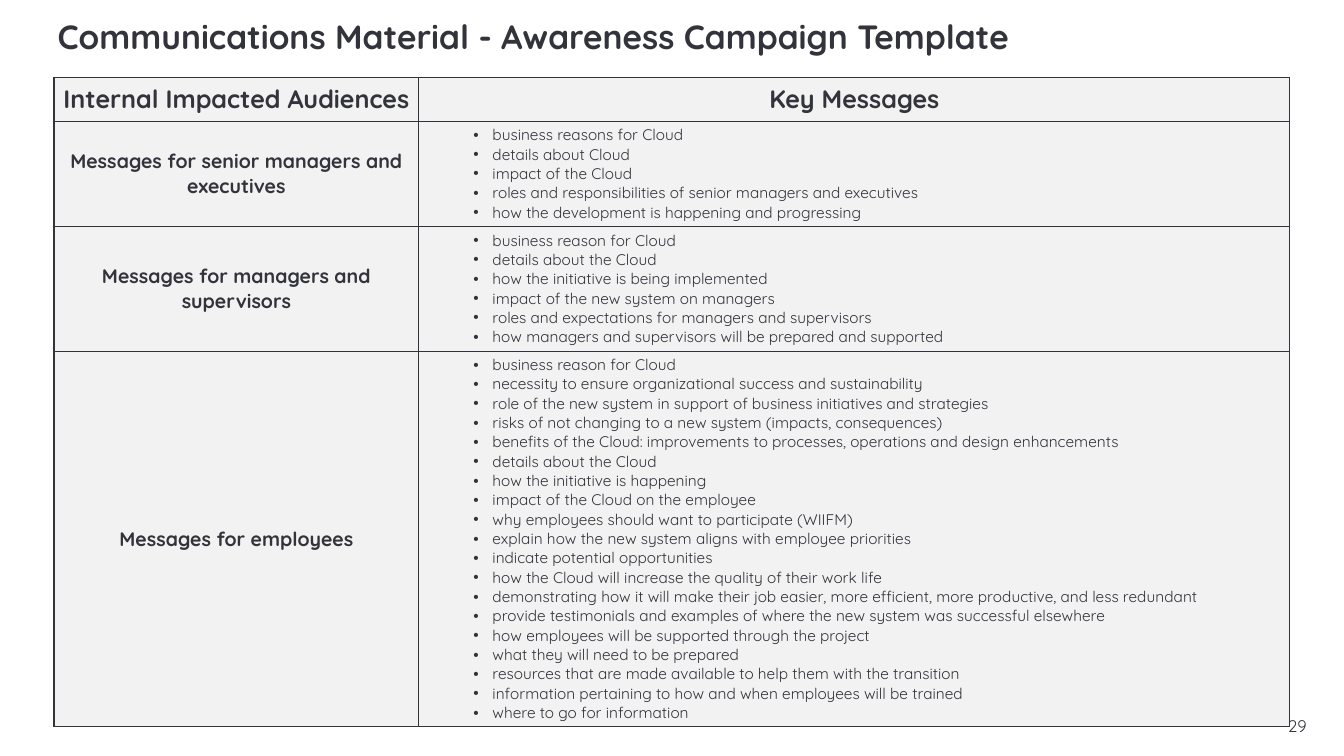
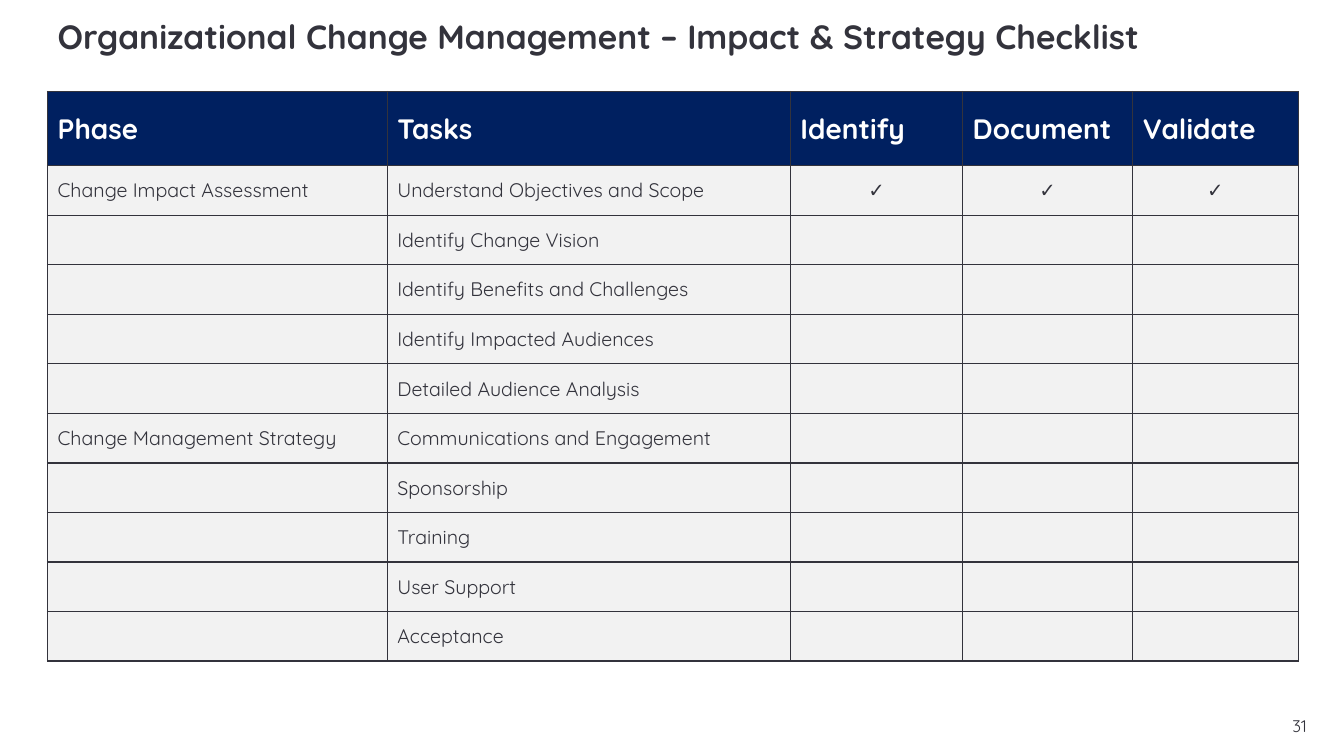
"""Build two change management slides: an awareness campaign table and a checklist."""
from dataclasses import dataclass

from lxml import etree
from pptx import Presentation
from pptx.dml.color import RGBColor
from pptx.enum.text import MSO_ANCHOR, PP_ALIGN
from pptx.oxml.ns import qn
from pptx.util import Pt

LEFT, CENTER, RIGHT = PP_ALIGN.LEFT, PP_ALIGN.CENTER, PP_ALIGN.RIGHT
TOP, MIDDLE = MSO_ANCHOR.TOP, MSO_ANCHOR.MIDDLE
TITLE_ONLY = 5


@dataclass(frozen=True)
class Theme:
    font: str = "Quicksand"
    bullet_font: str = "Arial"
    ink: str = "33333C"
    white: str = "FFFFFF"
    navy: str = "002060"
    pale: str = "F2F2F2"
    title: int = 24
    checklist_header: int = 20
    campaign_header: int = 18
    body: int = 14
    number: int = 12
    bullet: int = 11
    border: int = 1


THEME = Theme()


def write_text(frame, lines, size, color=THEME.ink, bold=False, align=LEFT, anchor=MIDDLE,
               line_spacing=None, before=0, after=0, bullets=False):
    frame.word_wrap = True
    frame.vertical_anchor = anchor
    for index, line in enumerate(lines):
        paragraph = frame.add_paragraph() if index else frame.paragraphs[0]
        paragraph.alignment = align
        paragraph.line_spacing = line_spacing
        paragraph.space_before = Pt(before)
        paragraph.space_after = Pt(after)
        run = paragraph.add_run()
        run.text = line
        run.font.name = THEME.font
        run.font.size = Pt(size)
        run.font.bold = bold
        run.font.color.rgb = RGBColor.from_string(color)
        if bullets:
            paragraph.level = 1
            properties = paragraph._p.get_or_add_pPr()
            properties.set("marL", str(Pt(49.7)))
            properties.set("indent", str(Pt(-13.7)))
            etree.SubElement(properties, qn("a:buFont"), typeface=THEME.bullet_font)
            etree.SubElement(properties, qn("a:buChar"), char="•")


def add_grid(slide, left, top, widths, heights, header_fill, margin=None):
    table = slide.shapes.add_table(len(heights), len(widths), Pt(left), Pt(top),
                                   Pt(sum(widths)), Pt(sum(heights))).table
    for column, width in zip(table.columns, widths):
        column.width = Pt(width)
    for row_index, (row, height) in enumerate(zip(table.rows, heights)):
        row.height = Pt(height)
        for cell in row.cells:
            cell.vertical_anchor = MIDDLE
            properties = cell._tc.get_or_add_tcPr()
            for side in ("a:lnL", "a:lnR", "a:lnT", "a:lnB"):
                line = etree.SubElement(properties, qn(side), w=str(Pt(THEME.border)))
                line_fill = etree.SubElement(line, qn("a:solidFill"))
                etree.SubElement(line_fill, qn("a:srgbClr"), val=THEME.ink)
            cell.fill.solid()
            cell.fill.fore_color.rgb = RGBColor.from_string(
                THEME.pale if row_index else header_fill)
            if margin is not None:
                cell.margin_left = cell.margin_right = Pt(margin)
                cell.margin_top = cell.margin_bottom = Pt(margin)
    return table


presentation = Presentation()
presentation.slide_width = Pt(960)
presentation.slide_height = Pt(540)

slides = []
for title, number in [
    ("Communications Material - Awareness Campaign Template", "29"),
    ("Organizational Change Management – Impact & Strategy Checklist", "31"),
]:
    slide = presentation.slides.add_slide(presentation.slide_layouts[TITLE_ONLY])
    heading = slide.shapes.title
    heading.left, heading.top, heading.width, heading.height = Pt(34), Pt(11), Pt(893.5), Pt(36.7)
    write_text(heading.text_frame, [title], THEME.title, bold=True, anchor=TOP, line_spacing=0.9)
    number_box = slide.shapes.add_textbox(Pt(890), Pt(504), Pt(50.4), Pt(28.8))
    write_text(number_box.text_frame, [number], THEME.number, align=RIGHT)
    slides.append(slide)
campaign_slide, checklist_slide = slides

audiences = [
    ("Messages for senior managers and executives", [
        "business reasons for Cloud",
        "details about Cloud",
        "impact of the Cloud",
        "roles and responsibilities of senior managers and executives",
        "how the development is happening and progressing",
    ]),
    ("Messages for managers and supervisors", [
        "business reason for Cloud",
        "details about the Cloud",
        "how the initiative is being implemented",
        "impact of the new system on managers",
        "roles and expectations for managers and supervisors",
        "how managers and supervisors will be prepared and supported",
    ]),
    ("Messages for employees", [
        "business reason for Cloud",
        "necessity to ensure organizational success and sustainability",
        "role of the new system in support of business initiatives and strategies",
        "risks of not changing to a new system (impacts, consequences)",
        "benefits of the Cloud: improvements to processes, operations and design enhancements",
        "details about the Cloud",
        "how the initiative is happening",
        "impact of the Cloud on the employee",
        "why employees should want to participate (WIIFM)",
        "explain how the new system aligns with employee priorities",
        "indicate potential opportunities",
        "how the Cloud will increase the quality of their work life",
        "demonstrating how it will make their job easier, more efficient, more productive, "
        "and less redundant",
        "provide testimonials and examples of where the new system was successful elsewhere",
        "how employees will be supported through the project",
        "what they will need to be prepared",
        "resources that are made available to help them with the transition",
        "information pertaining to how and when employees will be trained",
        "where to go for information",
    ]),
]
campaign = add_grid(campaign_slide, 38.6, 55.4, [260.6, 622.1], [31.2, 75, 89.3, 268],
                    THEME.pale, margin=2.9)
label_format = {"bold": True, "align": CENTER, "before": 3, "after": 6}
for column, header in enumerate(["Internal Impacted Audiences", "Key Messages"]):
    write_text(campaign.cell(0, column).text_frame, [header], THEME.campaign_header,
               **label_format)
for row, (audience, messages) in enumerate(audiences, start=1):
    write_text(campaign.cell(row, 0).text_frame, [audience], THEME.body, **label_format)
    write_text(campaign.cell(row, 1).text_frame, messages, THEME.bullet, bullets=True)

phases = [
    ("Change Impact Assessment", [
        "Understand Objectives and Scope",
        "Identify Change Vision",
        "Identify Benefits and Challenges",
        "Identify Impacted Audiences",
        "Detailed Audience Analysis",
    ]),
    ("Change Management Strategy", [
        "Communications and Engagement",
        "Sponsorship",
        "Training",
        "User Support",
        "Acceptance",
    ]),
]
checklist_rows = [["Phase", "Tasks", "Identify", "Document", "Validate"]]
for phase, tasks in phases:
    for index, task in enumerate(tasks):
        mark = "✓" if len(checklist_rows) == 1 else ""
        checklist_rows.append(["" if index else phase, task, mark, mark, mark])

checklist = add_grid(checklist_slide, 34, 65.3, [242.6, 288, 123, 121.6, 118.1],
                     [53.1] + [35.4] * (len(checklist_rows) - 1), THEME.navy)
for row, values in enumerate(checklist_rows):
    for column, value in enumerate(values):
        frame = checklist.cell(row, column).text_frame
        if row == 0:
            write_text(frame, [value], THEME.checklist_header, color=THEME.white, bold=True)
        elif value:
            write_text(frame, [value], THEME.body, align=CENTER if column > 1 else LEFT)

presentation.save("out.pptx")
